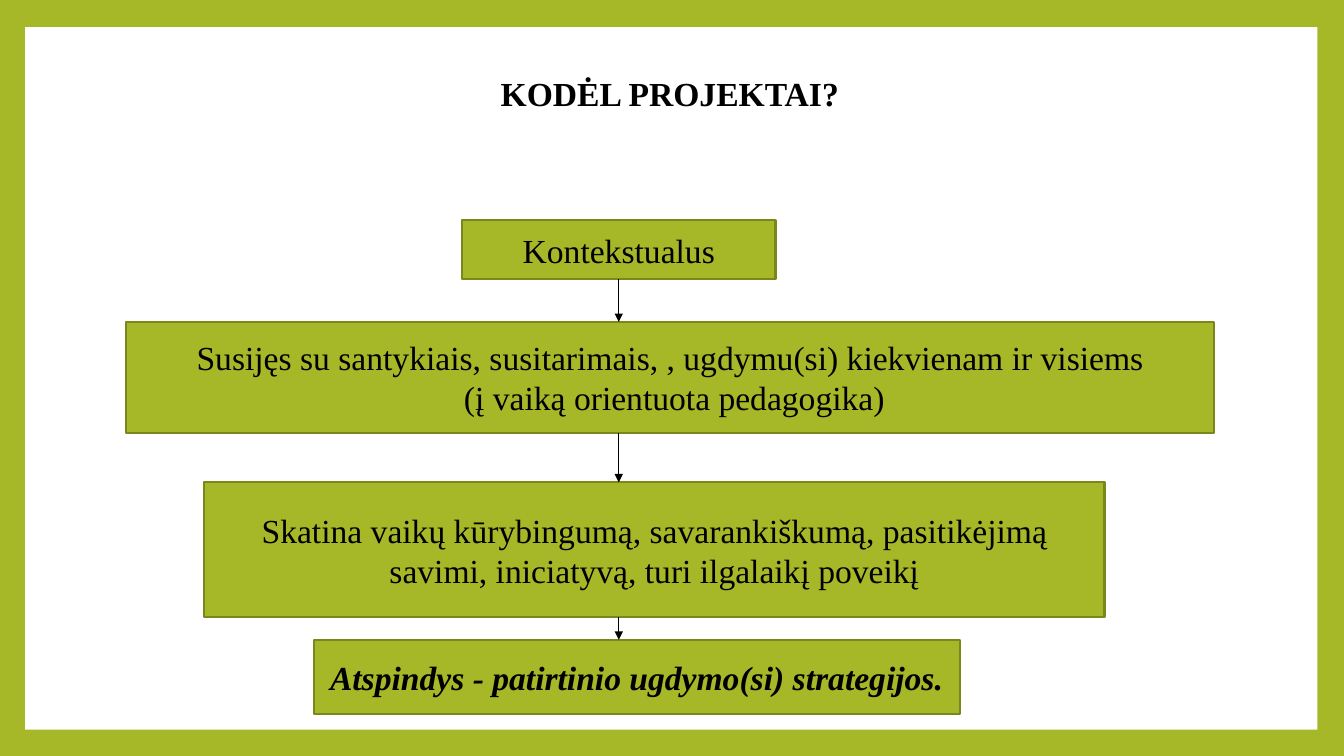
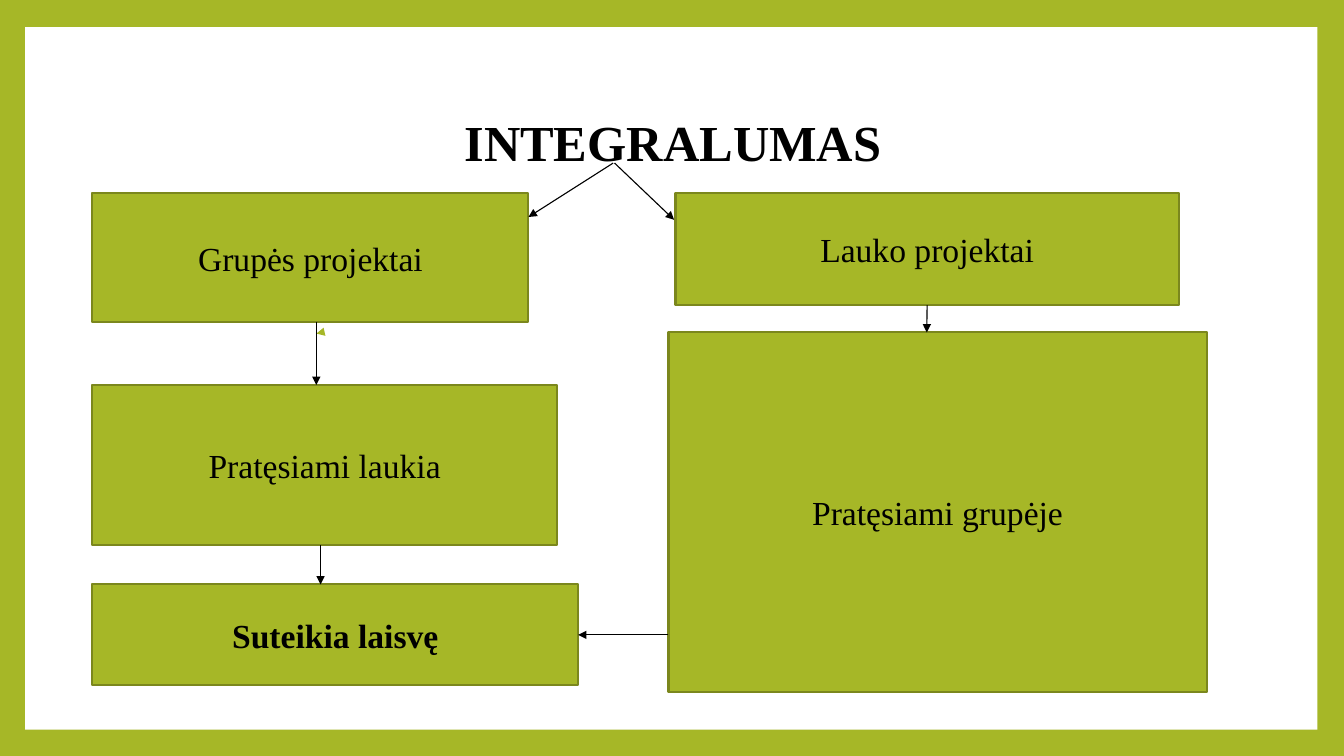
from lxml import etree
from pptx import Presentation
from pptx.dml.color import RGBColor
from pptx.enum.shapes import MSO_CONNECTOR, MSO_SHAPE
from pptx.enum.text import MSO_ANCHOR, MSO_AUTO_SIZE, PP_ALIGN
from pptx.oxml.ns import qn
from pptx.util import Pt

RECT = MSO_SHAPE.RECTANGLE
STRAIGHT = MSO_CONNECTOR.STRAIGHT
CENTER = PP_ALIGN.CENTER
TOP, MIDDLE = MSO_ANCHOR.TOP, MSO_ANCHOR.MIDDLE
NO_FIT = MSO_AUTO_SIZE.NONE

GREEN = RGBColor(0xA6, 0xB7, 0x27)
OLIVE = RGBColor(0x7B, 0x87, 0x1D)
WHITE = RGBColor(0xFF, 0xFF, 0xFF)
BLACK = RGBColor(0x00, 0x00, 0x00)
FONT = "Times New Roman"
TITLE_ONLY = 5
BOTTOM_SITE, RIGHT_SITE = 2, 3


def add_run(p, text, size=24, bold=False, italic=False):
    """Add a centred run in the deck font."""
    p.alignment = CENTER
    r = p.add_run()
    r.text = text
    r.font.name = FONT
    r.font.size = Pt(size)
    r.font.bold = bold
    r.font.italic = italic
    r.font.color.rgb = BLACK


def add_rect(s, box, fill):
    """Add a flat filled rectangle at box (left, top, width, height)."""
    sp = s.shapes.add_shape(RECT, *map(Pt, box))
    sp.shadow.inherit = False
    sp.fill.solid()
    sp.fill.fore_color.rgb = fill
    return sp


def add_box(s, box, *lines, bold=False, italic=False):
    """Add a green box holding one paragraph per line."""
    sp = add_rect(s, box, GREEN)
    sp.line.color.rgb = OLIVE
    sp.line.width = Pt(1.5)
    tf = sp.text_frame
    tf.word_wrap = True
    tf.vertical_anchor = MIDDLE
    for i, line in enumerate(lines):
        p = tf.add_paragraph() if i else tf.paragraphs[0]
        add_run(p, line, bold=bold, italic=italic)
    return sp


def add_arrow(s, start, end, color=BLACK):
    """Add a thin straight arrow from start to end."""
    cx = s.shapes.add_connector(STRAIGHT, *map(Pt, start + end))
    cx.line.color.rgb = color
    cx.line.width = Pt(0.79)
    ln = cx.line._get_or_add_ln()
    etree.SubElement(ln, qn("a:tailEnd"), type="triangle")
    etree.SubElement(cx.element.spPr, qn("a:effectLst"))
    return cx


def set_title(s, box, text, size, anchor):
    """Place and fill the slide title."""
    sp = s.shapes.title
    sp.left, sp.top, sp.width, sp.height = map(Pt, box)
    tf = sp.text_frame
    tf.auto_size = NO_FIT
    tf.word_wrap = True
    tf.vertical_anchor = anchor
    p = tf.paragraphs[0]
    p.line_spacing = 0.9
    add_run(p, text, size, bold=True)


def frame_master(prs, s):
    """Give the master a green background and a white panel, drawn via s."""
    master = prs.slide_master
    master.background.fill.solid()
    master.background.fill.fore_color.rgb = GREEN
    panel = add_rect(s, (18, 19.4, 923, 501.8), WHITE)
    panel.line.fill.background()
    panel.element.nvSpPr.cNvPr.set("id", "100")
    master.shapes.element.insert(2, panel.element)


def build_reasons(s):
    """Build the chain of reasons for projects."""
    set_title(s, (66, 52, 825, 60), "KODĖL PROJEKTAI?", 24, TOP)
    context = add_box(s, (330, 157, 224, 42.5), "Kontekstualus")
    add_box(s, (90, 230, 777.5, 79),
            "Susijęs su santykiais, susitarimais, , ugdymu(si) kiekvienam ir visiems",
            " (į vaiką orientuota pedagogika)")
    add_box(s, (146, 344.5, 643, 96.5),
            "Skatina vaikų kūrybingumą, savarankiškumą, pasitikėjimą "
            "savimi, iniciatyvą, turi ilgalaikį poveikį")
    add_box(s, (224, 457, 461.5, 53),
            "Atspindys - patirtinio ugdymo(si) strategijos.", bold=True, italic=True)
    add_arrow(s, (442, 199.5), (442, 230)).begin_connect(context, BOTTOM_SITE)
    add_arrow(s, (442, 309), (442, 344.5))
    add_arrow(s, (442, 441), (442, 457))


def build_integrality(s):
    """Build the two branches of integrated projects."""
    set_title(s, (92, 50.5, 777.5, 106.5), "INTEGRALUMAS", 36, MIDDLE)
    add_box(s, (66, 138, 311.5, 92), "Grupės projektai")
    outdoor = add_box(s, (482.5, 138, 359.5, 80), "Lauko projektai")
    add_box(s, (66, 275, 332, 114.5), "Pratęsiami laukia")
    add_box(s, (477.5, 237.5, 384.5, 257), "Pratęsiami grupėje")
    freedom = add_box(s, (66, 417.5, 347, 72), "Suteikia laisvę", bold=True)
    add_arrow(s, (229, 237.6), (226, 238.3), GREEN)
    add_arrow(s, (226, 230), (226, 275))
    add_arrow(s, (229, 389.5), (229, 417.5))
    add_arrow(s, (662, 218), (662, 237.5)).begin_connect(outdoor, BOTTOM_SITE)
    add_arrow(s, (477.5, 453.5), (413, 453.5)).end_connect(freedom, RIGHT_SITE)
    add_arrow(s, (438, 116.5), (377.5, 155))
    add_arrow(s, (439, 116.5), (481.5, 157))


def main():
    """Build and save the deck."""
    prs = Presentation()
    prs.slide_width, prs.slide_height = Pt(960), Pt(540)
    layout = prs.slide_layouts[TITLE_ONLY]
    reasons, integrality = (prs.slides.add_slide(layout) for _ in range(2))
    frame_master(prs, reasons)
    build_reasons(reasons)
    build_integrality(integrality)
    prs.save("out.pptx")


if __name__ == "__main__":
    main()
